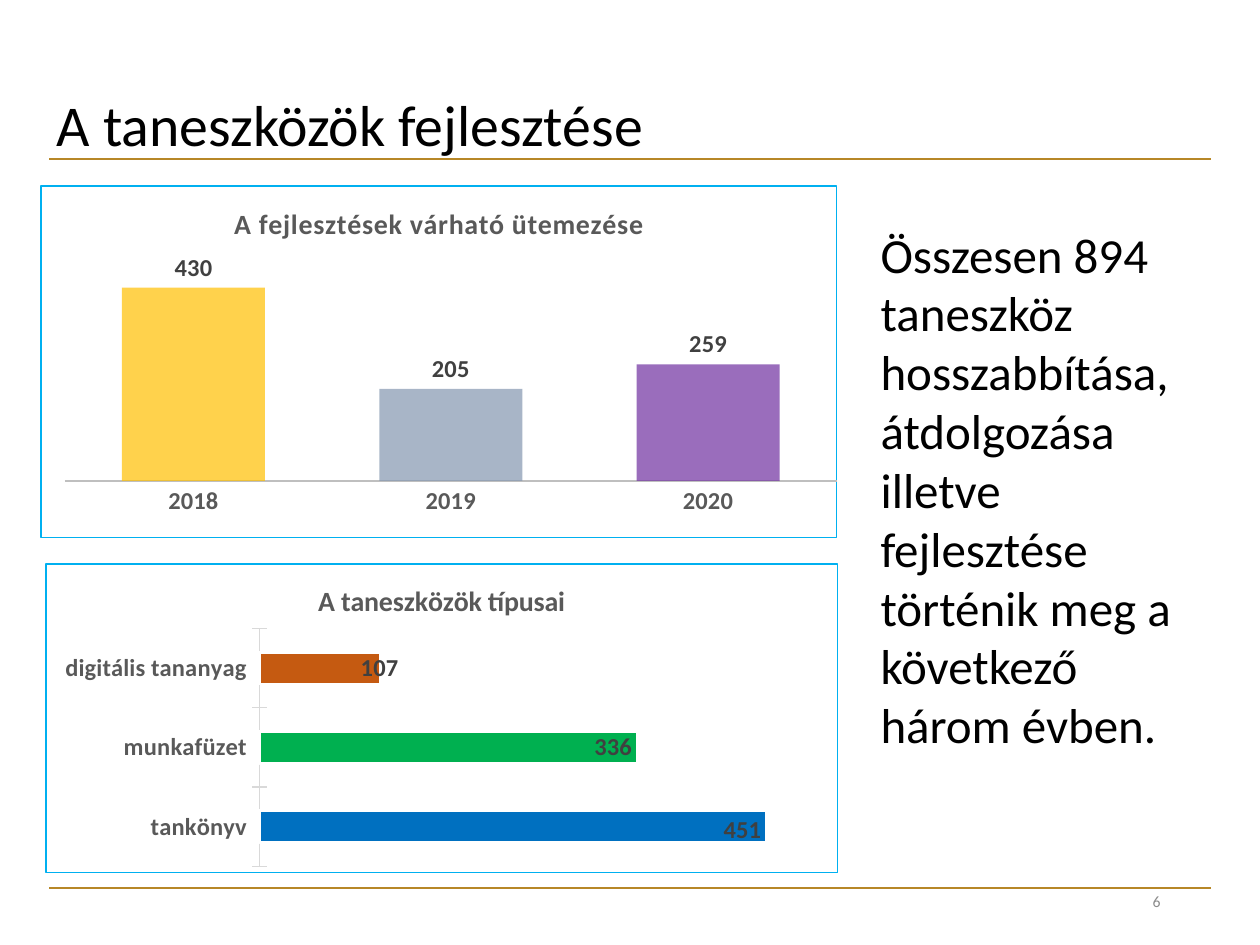
"""Build the slide on the development of teaching materials."""
import lxml.etree
import pptx
import pptx.chart.data
import pptx.dml.color
import pptx.enum.chart
import pptx.enum.shapes
import pptx.enum.text
import pptx.oxml
import pptx.oxml.ns
import pptx.util

Inches, Pt = pptx.util.Inches, pptx.util.Pt
qn = pptx.oxml.ns.qn
XL = pptx.enum.chart.XL_CHART_TYPE
TICK = pptx.enum.chart.XL_TICK_MARK
LABEL = pptx.enum.chart.XL_LABEL_POSITION
ALIGN = pptx.enum.text.PP_ALIGN
ANCHOR = pptx.enum.text.MSO_ANCHOR

COLORS = {
    "text": "000000", "number": "8C8C8C", "rule": "B78727", "border": "00B0F0",
    "heading": "595959", "label": "404040", "axis": "BFBFBF", "ticks": "D9D9D9",
    "series": "5B9BD5", "white": "FFFFFF", "yellow": "FFC000", "slate": "8497B0",
    "purple": "7030A0", "blue": "0070C0", "green": "00B050", "orange": "C55A11",
}


def rgb(name):
    return pptx.dml.color.RGBColor.from_string(COLORS[name])


class SlideBuilder:
    """Holds the style and the current slide."""

    font = "Calibri"

    def __init__(self, prs):
        self.slide = prs.slides.add_slide(prs.slide_layouts[5])

    def style(self, font, size, color, bold=False):
        font.name, font.size, font.bold = self.font, Pt(size), bold
        font.color.rgb = rgb(color)

    def fill_text(self, sp, text, size, color, align, anchor):
        tf = sp.text_frame
        tf.text = text
        tf.word_wrap = True
        tf.vertical_anchor = anchor
        p = tf.paragraphs[0]
        p.alignment = align
        self.style(p.runs[0].font, size, color)
        return tf

    def title(self, text, x, y, w, h):
        sp = self.slide.shapes.title
        sp.left, sp.top, sp.width, sp.height = map(Inches, (x, y, w, h))
        tf = self.fill_text(sp, text, 33, "text", ALIGN.LEFT, ANCHOR.MIDDLE)
        tf.paragraphs[0].line_spacing = 0.9

    def text(self, text, x, y, w, h, size, color="text", align=ALIGN.LEFT, anchor=ANCHOR.TOP):
        sp = self.slide.shapes.add_textbox(*map(Inches, (x, y, w, h)))
        return self.fill_text(sp, text, size, color, align, anchor)

    def rule(self, y):
        line = self.slide.shapes.add_connector(
            pptx.enum.shapes.MSO_CONNECTOR.STRAIGHT,
            Inches(0.39), Inches(y), Inches(9.61), Inches(y))
        line.line.color.rgb = rgb("rule")
        line.line.width = Pt(1)
        lxml.etree.SubElement(line._element.spPr, qn("a:effectLst"))

    def layout(self, parent, index, inner=False, **values):
        layout = pptx.oxml.parse_xml(
            f'<c:layout {pptx.oxml.ns.nsdecls("c")}><c:manualLayout/></c:layout>')
        manual = layout[0]
        modes = {"xMode": "edge", "yMode": "edge"} if inner else {}
        target = {"layoutTarget": "inner"} if inner else {}
        for tag, value in {**target, **modes, **values}.items():
            lxml.etree.SubElement(manual, qn(f"c:{tag}")).set("val", str(value))
        for old in parent.findall(qn("c:layout")):
            parent.remove(old)
        parent.insert(index, layout)

    def border(self, chart):
        spPr = pptx.oxml.parse_xml(
            f'<c:spPr {pptx.oxml.ns.nsdecls("c", "a")}><a:noFill/><a:ln w="9525"><a:solidFill>'
            f'<a:srgbClr val="{COLORS["border"]}"/></a:solidFill></a:ln></c:spPr>')
        chart._chartSpace.find(qn("c:chart")).addnext(spPr)

    def chart(self, kind, box, title, data, plot_box, gap, axis_line, tick):
        chart_data = pptx.chart.data.CategoryChartData()
        chart_data.categories = [name for name, _, _ in data]
        chart_data.add_series("Series 1", [value for _, value, _ in data])
        chart = self.slide.shapes.add_chart(kind, *map(Inches, box), chart_data).chart
        self.style(chart.font, 10, "text")
        chart.has_legend = False
        self.border(chart)

        chart.has_title = True
        tf = chart.chart_title.text_frame
        tf.text = title
        self.style(tf.paragraphs[0].runs[0].font, 16, "heading", True)
        chart.chart_title.include_in_layout = False

        axis = chart.category_axis
        axis.major_tick_mark = tick
        axis.has_major_gridlines = False
        self.style(axis.tick_labels.font, 14, "heading", True)
        color, width = axis_line
        axis.format.line.color.rgb = rgb(color)
        axis.format.line.width = Pt(width)
        values = chart.value_axis
        values.visible = values.has_major_gridlines = False
        values.minimum_scale, values.maximum_scale = 0, 500

        plot = chart.plots[0]
        plot.vary_by_categories = False
        plot.gap_width = gap
        self.layout(chart._chartSpace.chart.plotArea, 0, True,
                    **dict(zip("xywh", plot_box)))
        series = plot.series[0]
        series.format.fill.solid()
        series.format.fill.fore_color.rgb = rgb("series")
        for i, (_, _, color) in enumerate(data):
            fill = series.points[i].format.fill
            fill.solid()
            fill.fore_color.rgb = rgb(color)
        labels = series.data_labels
        labels.show_value = True
        self.style(labels.font, 14, "label", True)
        return chart

    def make_transparent(self, series, percent):
        for clr in series._element.xpath("./c:spPr//a:srgbClr | ./c:dPt//a:srgbClr"):
            lxml.etree.SubElement(clr, qn("a:alpha")).set("val", str(percent * 1000))

    def outline(self, series, count):
        for item in [series, *(series.points[i] for i in range(count))]:
            item.format.line.color.rgb = rgb("white")
            item.format.line.width = Pt(1.5)

    def move_label(self, series, index, dx, dy):
        label = series.points[index].data_label
        label.position = LABEL.INSIDE_END
        self.style(label.font, 14, "label", True)
        dLbl = series._element.xpath(f"./c:dLbls/c:dLbl[c:idx/@val={index}]")[0]
        self.layout(dLbl, 1, x=dx, y=dy)


def main():
    prs = pptx.Presentation()
    prs.slide_width, prs.slide_height = Inches(10), Inches(7.5)
    s = SlideBuilder(prs)
    for y in (1.26, 7.05):
        s.rule(y)
    s.title("A taneszközök fejlesztése", 0.35, 0.29, 8.62, 1.45)
    s.text("6", 7.06, 6.95, 2.25, 0.4, 9, "number", ALIGN.RIGHT, ANCHOR.MIDDLE)

    schedule = s.chart(
        XL.COLUMN_CLUSTERED, (0.32, 1.47, 6.33, 2.8), "A fejlesztések várható ütemezése",
        [("2018", 430, "yellow"), ("2019", 205, "slate"), ("2020", 259, "purple")],
        (0.03, 0.2, 0.97, 0.64), 80, ("axis", 1.25), TICK.NONE)
    schedule.plots[0].overlap = 25
    schedule.chart_title.text_frame.paragraphs[0].runs[0].font._element.set("spc", "50")
    series = schedule.plots[0].series[0]
    series.data_labels.position = LABEL.OUTSIDE_END
    s.make_transparent(series, 70)

    types = s.chart(
        XL.BAR_CLUSTERED, (0.36, 4.47, 6.29, 2.46), "A taneszközök típusai",
        [("tankönyv", 451, "blue"), ("munkafüzet", 336, "green"),
         ("digitális tananyag", 107, "orange")],
        (0.27, 0.21, 0.71, 0.77), 150, ("ticks", 0.75), TICK.CROSS)
    series = types.plots[0].series[0]
    series.data_labels.position = LABEL.INSIDE_END
    s.outline(series, 3)
    s.move_label(series, 0, 0, 0.01)
    s.move_label(series, 2, 0.03, 0)

    tf = s.text("Összesen 894 taneszköz hosszabbítása, átdolgozása illetve fejlesztése "
                "történik meg a következő három évben.", 6.89, 1.73, 2.68, 4.34, 28)
    tf.auto_size = pptx.enum.text.MSO_AUTO_SIZE.SHAPE_TO_FIT_TEXT
    prs.save("out.pptx")


if __name__ == "__main__":
    main()
